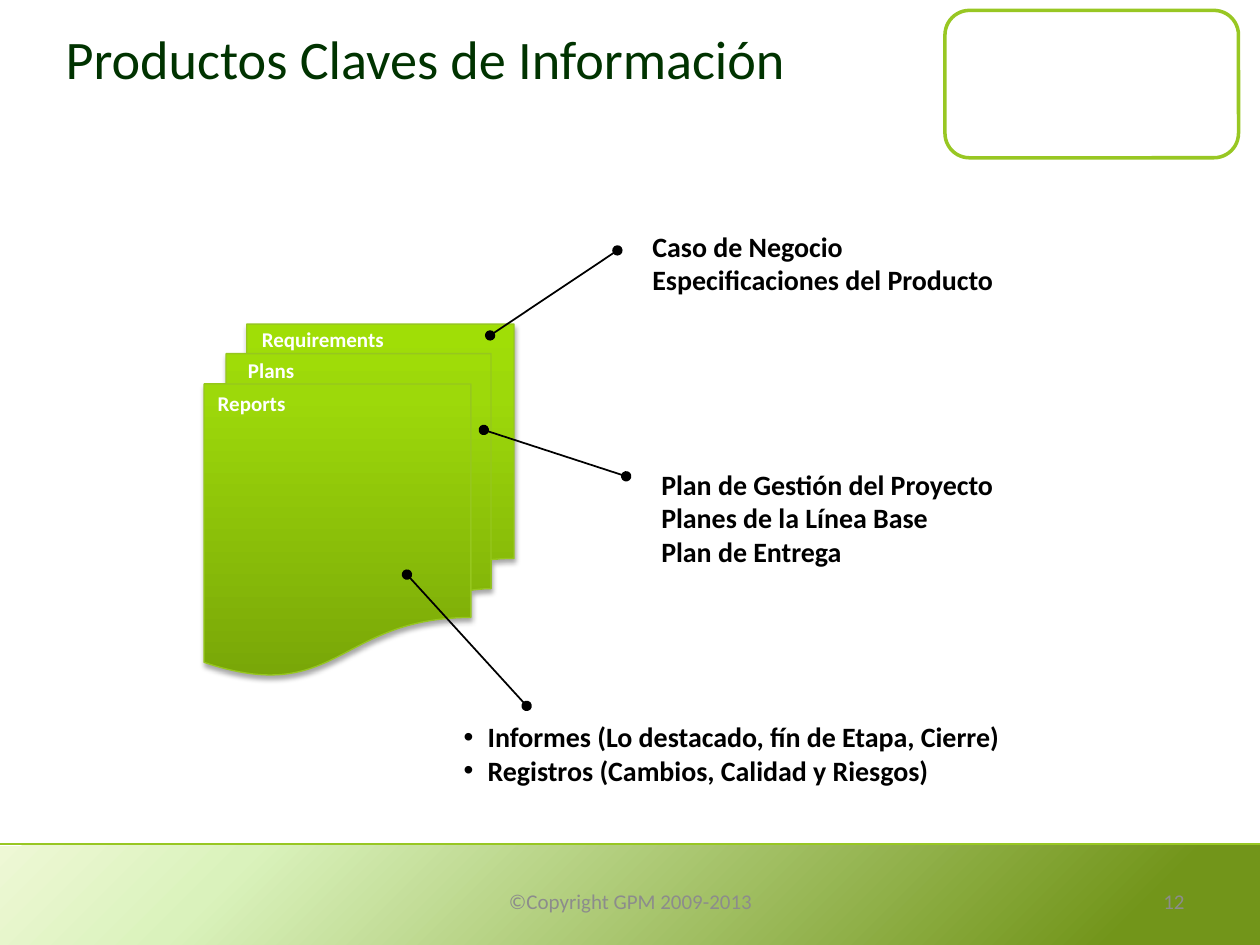
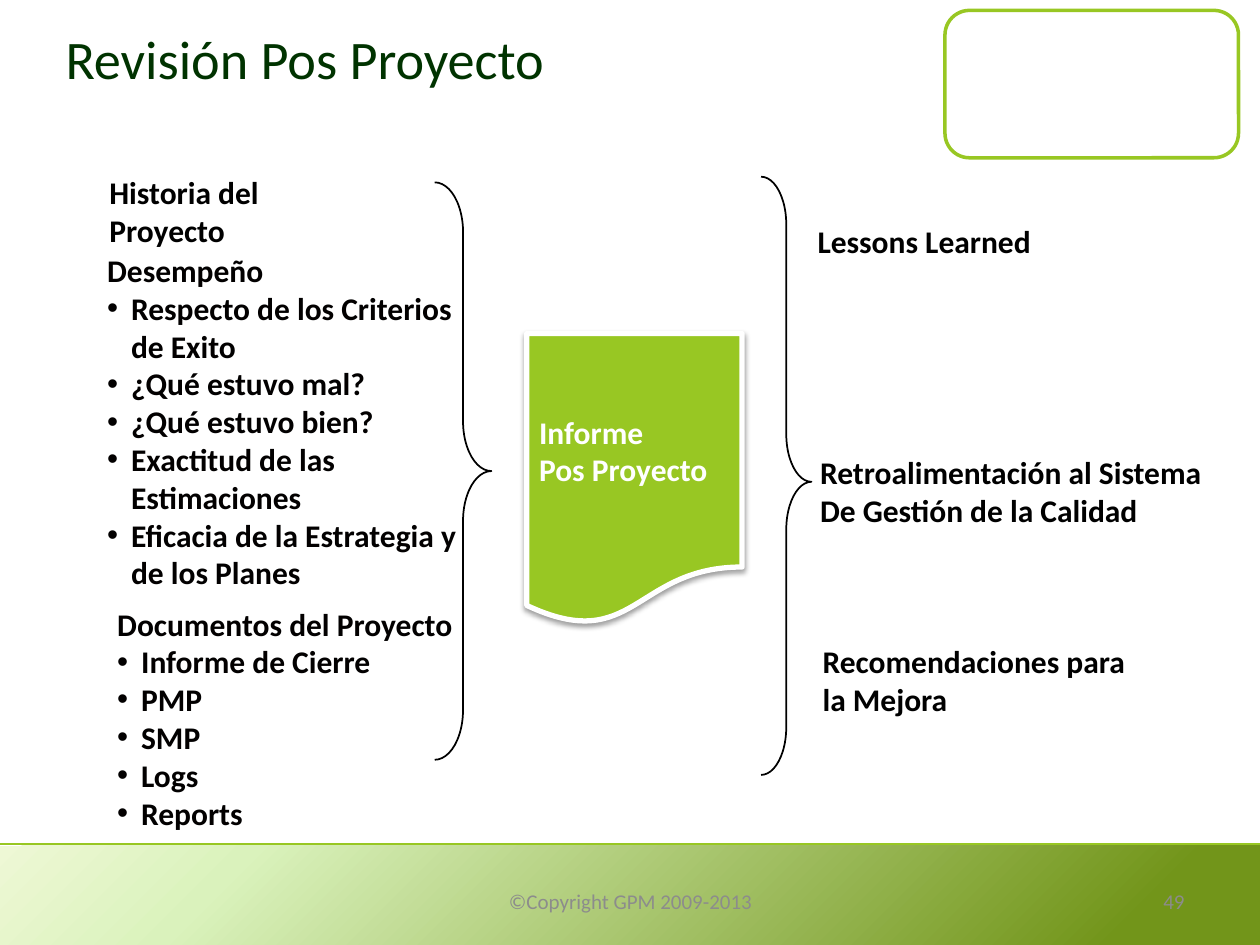
from pptx import Presentation
from pptx import util as u
from pptx.dml.color import RGBColor
from pptx.enum import shapes, text
from pptx.oxml import ns, parse_xml

WHITE = RGBColor(0xFF, 0xFF, 0xFF)
BLACK = RGBColor(0x00, 0x00, 0x00)
INK = RGBColor(0x02, 0x00, 0x00)
GREEN = RGBColor(0x98, 0xC7, 0x23)
PAGE_EDGE = RGBColor(0x96, 0xC7, 0x1E)
DARK_GREEN = RGBColor(0x00, 0x33, 0x00)
GREY = RGBColor(0x8C, 0x8C, 0x8C)
BAND_STOPS = [(0, RGBColor(0xEE, 0xF8, 0xD5)), (19, RGBColor(0xDA, 0xF2, 0xBC)),
              (89, RGBColor(0x72, 0x95, 0x1A))]
PAGE_STOPS = [(0, RGBColor(0x79, 0xA7, 0x08)), (80, RGBColor(0x9D, 0xD9, 0x0A)),
              (100, RGBColor(0xA0, 0xDE, 0x06))]

FONT = "Calibri"
TITLE = {"size": u.Pt(31), "color": DARK_GREEN}
FOOTER = {"size": u.Pt(12), "color": GREY}
TAB_LABEL = {"size": u.Pt(12), "color": WHITE, "bold": True}
NOTE = {"size": u.Pt(16), "color": BLACK, "bold": True}
HEADING = {"size": u.Pt(18), "color": BLACK, "bold": True}
LIST = {**HEADING, "color": INK}
REPORT = {**HEADING, "color": WHITE}

HANGING = u.Inches(0.19)
TITLE_AND_LIST, TITLE_AND_TWO_LISTS = 1, 3
KIND = shapes.MSO_SHAPE
LEFT, CENTER, RIGHT = text.PP_ALIGN.LEFT, text.PP_ALIGN.CENTER, text.PP_ALIGN.RIGHT
TOP, MIDDLE = text.MSO_ANCHOR.TOP, text.MSO_ANCHOR.MIDDLE


def drawing(tag, content):
    return parse_xml(f'<a:{tag} {ns.nsdecls("a")}>{content}</a:{tag}>')


class Deck:
    def __init__(self):
        self.presentation = Presentation()
        self.presentation.slide_width = u.Inches(10)
        self.presentation.slide_height = u.Inches(7.5)
        self.slide = None

    def across(self, percent):
        return int(self.presentation.slide_width * percent / 100)

    def down(self, percent):
        return int(self.presentation.slide_height * percent / 100)

    def box(self, left, top, width, height):
        return self.across(left), self.down(top), self.across(width), self.down(height)

    def place(self, shape, box):
        for name, value in zip(("left", "top", "width", "height"), self.box(*box)):
            setattr(shape, name, value)

    def fill_text(self, shape, lines, style, align=LEFT, anchor=TOP, wrap=True,
                  bullets_from=None):
        frame = shape.text_frame
        frame.auto_size = text.MSO_AUTO_SIZE.NONE
        frame.word_wrap = wrap
        frame.vertical_anchor = anchor
        for index, line in enumerate(lines):
            paragraph = frame.paragraphs[0] if index == 0 else frame.add_paragraph()
            if bullets_from is not None:
                self.hang(paragraph, index >= bullets_from)
            paragraph.alignment = align
            paragraph.space_before = u.Pt(0)
            run = paragraph.add_run()
            run.text = line
            run.font.name = FONT
            for name, value in style.items():
                if name == "color":
                    run.font.color.rgb = value
                else:
                    setattr(run.font, name, value)

    def hang(self, paragraph, bulleted):
        properties = paragraph._p.get_or_add_pPr()
        properties.set("marL", str(HANGING))
        properties.set("indent", str(-HANGING))
        bullet = drawing("buChar", "") if bulleted else drawing("buNone", "")
        if bulleted:
            bullet.set("char", "•")
        properties.append(bullet)

    def new_slide(self, layout, title, number):
        self.slide = self.presentation.slides.add_slide(self.presentation.slide_layouts[layout])
        self.shape(KIND.ROUNDED_RECTANGLE, (75, 1.1, 23.3, 15.6), fill=WHITE, line=GREEN, weight=2)
        band = self.shape(KIND.RECTANGLE, (0, 89.5, 100, 10.5))
        self.gradient(band, BAND_STOPS, 45)
        self.line((0, 89.3), (100, 89.3), GREEN, 1.5)
        heading = self.slide.shapes.title
        self.place(heading, (4.2, 0, 70, 12.3))
        self.fill_text(heading, [title], TITLE, anchor=MIDDLE)
        self.label(["©Copyright GPM 2009-2013"], (34.2, 92.7, 31.7, 5.3), FOOTER,
                   align=CENTER, anchor=MIDDLE)
        self.label([str(number)], (71.7, 92.7, 23.3, 5.3), FOOTER, align=RIGHT, anchor=MIDDLE)

    def shape(self, kind, box, fill=None, line=None, weight=1, adjustments=()):
        shape = self.slide.shapes.add_shape(kind, *self.box(*box))
        shape.shadow.inherit = False
        for index, value in enumerate(adjustments):
            shape.adjustments[index] = value
        if fill is None:
            shape.fill.background()
        else:
            shape.fill.solid()
            shape.fill.fore_color.rgb = fill
        if line is None:
            shape.line.fill.background()
        else:
            shape.line.color.rgb = line
            shape.line.width = u.Pt(weight)
        return shape

    def gradient(self, shape, stops, angle):
        marks = "".join(f'<a:gs pos="{position * 1000}"><a:srgbClr val="{color}"/></a:gs>'
                        for position, color in stops)
        fill = drawing("gradFill", f'<a:gsLst>{marks}</a:gsLst>'
                                   f'<a:lin ang="{angle * 60000}" scaled="0"/>')
        properties = shape._element.spPr
        properties.replace(properties.find(ns.qn("a:noFill")), fill)

    def drop_shadow(self, shape, opacity, distance):
        shadow = drawing("outerShdw", f'<a:srgbClr val="{BLACK}">'
                                      f'<a:alpha val="{opacity * 1000}"/></a:srgbClr>')
        settings = {"blurRad": u.Pt(3.1), "dist": u.Pt(distance), "dir": 90 * 60000,
                    "rotWithShape": 0}
        for name, value in settings.items():
            shadow.set(name, str(value))
        shape._element.spPr.find(ns.qn("a:effectLst")).append(shadow)

    def line(self, start, end, color=BLACK, weight=1, dots=False):
        connector = self.slide.shapes.add_connector(
            shapes.MSO_CONNECTOR.STRAIGHT, self.across(start[0]), self.down(start[1]),
            self.across(end[0]), self.down(end[1]))
        connector.line.color.rgb = color
        connector.line.width = u.Pt(weight)
        properties = connector._element.spPr
        properties.append(drawing("effectLst", ""))
        if dots:
            for tag in ("headEnd", "tailEnd"):
                dot = drawing(tag, "")
                dot.set("type", "oval")
                properties.find(ns.qn("a:ln")).append(dot)

    def label(self, lines, box, style, **options):
        self.fill_text(self.slide.shapes.add_textbox(*self.box(*box)), lines, style, **options)

    def bullet_list(self, position, lines, box, style, bullets_from=0):
        body = self.slide.placeholders[position]
        self.place(body, box)
        self.fill_text(body, lines, style, bullets_from=bullets_from)


def information_products(deck):
    deck.new_slide(TITLE_AND_LIST, "Productos Claves de Información", 12)
    pages = deck.shape(KIND.FLOWCHART_MULTIDOCUMENT, (16.2, 34.3, 24.6, 37.2),
                       line=PAGE_EDGE, weight=0.75)
    deck.gradient(pages, PAGE_STOPS, 270)
    deck.drop_shadow(pages, 35, 1.8)
    for name, box in (("Requirements", (19.8, 33.9, 11.8, 4)),
                      ("Plans", (18.7, 37.2, 5.7, 4)),
                      ("Reports", (16.3, 40.7, 7.4, 4))):
        deck.label([name], box, TAB_LABEL, wrap=False)
    deck.label(["Caso de Negocio", "Especificaciones del Producto"],
               (50.8, 23.6, 38.3, 8.5), NOTE)
    deck.label(["Plan de Gestión del Proyecto", "Planes de la Línea Base", "Plan de Entrega"],
               (51.5, 48.8, 37.5, 12.1), NOTE)
    deck.bullet_list(1, ["Informes (Lo destacado, fín de Etapa, Cierre)",
                         "Registros (Cambios, Calidad y Riesgos)"],
                     (35.8, 75.5, 54.6, 11.2), NOTE)
    for page_point, note_point in (((38.9, 35.5), (49, 26.5)),
                                   ((38.4, 45.5), (49.7, 50.4)),
                                   ((32.3, 60.8), (41.8, 74.7))):
        deck.line(page_point, note_point, dots=True)


def post_project_review(deck):
    deck.new_slide(TITLE_AND_TWO_LISTS, "Revisión Pos Proyecto", 49)
    report = deck.shape(KIND.FLOWCHART_DOCUMENT, (41.8, 35.3, 17.1, 30.8),
                        fill=GREEN, line=WHITE, weight=3)
    deck.drop_shadow(report, 38, 1.6)
    deck.fill_text(report, ["Informe", "Pos Proyecto"], REPORT, anchor=MIDDLE, wrap=False)
    deck.label(["Historia del Proyecto"], (7.7, 17.7, 23, 9.5), HEADING)
    deck.bullet_list(1, ["Desempeño", "Respecto de los Criterios de Exito",
                         "¿Qué estuvo mal?", "¿Qué estuvo bien?",
                         "Exactitud de las Estimaciones",
                         "Eficacia de la Estrategia y de los Planes"],
                     (7.5, 25.9, 30.4, 41.7), LIST, bullets_from=1)
    deck.bullet_list(2, ["Documentos del Proyecto", "Informe de Cierre", "PMP", "SMP",
                         "Logs", "Reports"],
                     (8.3, 63.3, 29.6, 25.6), LIST, bullets_from=1)
    deck.shape(KIND.RIGHT_BRACE, (34.5, 19.3, 4.5, 61.1), line=BLACK, adjustments=(0.88, 0.5))
    outputs_brace = deck.shape(KIND.LEFT_BRACE, (60.4, 18.7, 4, 63.3), line=BLACK,
                               adjustments=(0.95, 0.49))
    outputs_brace.rotation = 180
    deck.label(["Lessons Learned"], (63.9, 22.8, 21.4, 5.9), HEADING, wrap=False)
    deck.label(["Retroalimentación al Sistema", "De Gestión de la Calidad"],
               (64.1, 47.3, 33.2, 9.5), HEADING, wrap=False)
    deck.label(["Recomendaciones para la Mejora"], (64.3, 67.3, 28.2, 9.5), HEADING)


def main():
    deck = Deck()
    information_products(deck)
    post_project_review(deck)
    deck.presentation.save("out.pptx")


if __name__ == "__main__":
    main()
